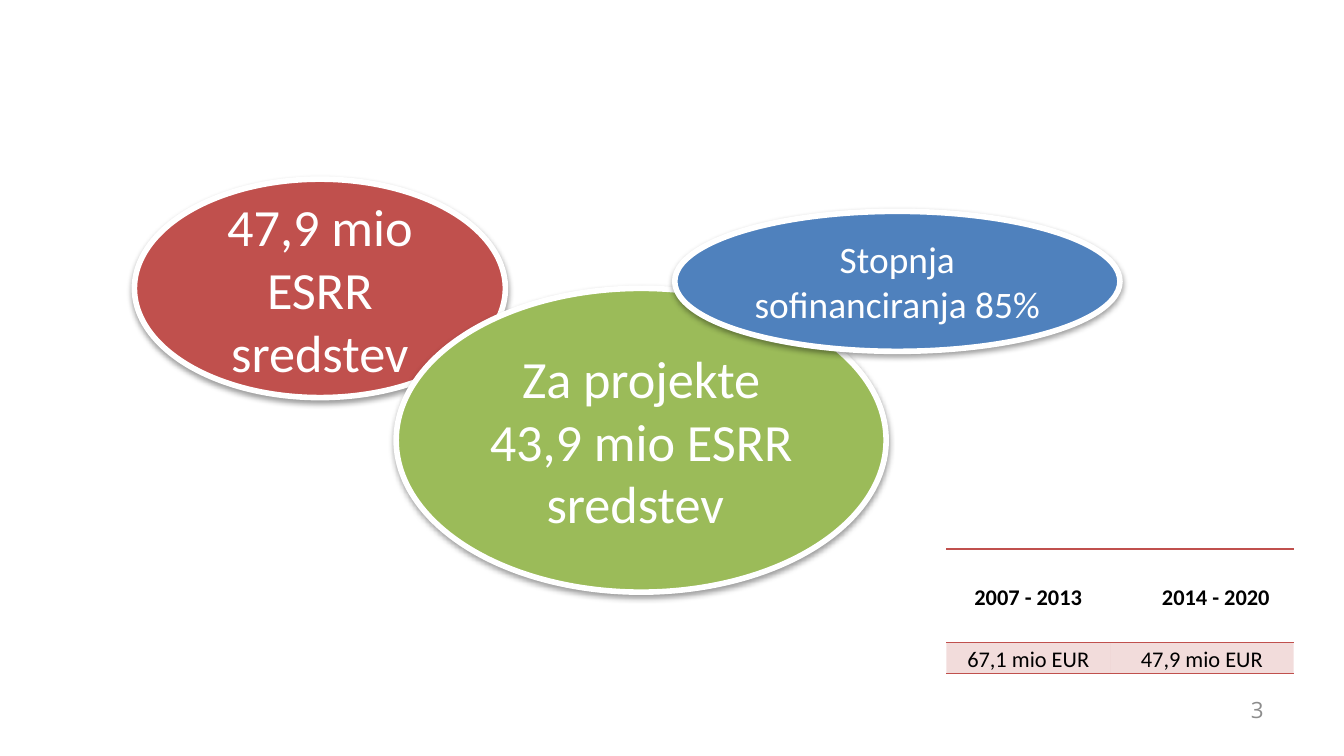
from dataclasses import dataclass

from lxml import etree
from pptx import Presentation
from pptx import util as u
from pptx.dml import color
from pptx.enum import shapes, text
from pptx.oxml import ns

PX = 9525
COLORS = {
    "red": "C0504D",
    "green": "9BBB59",
    "blue": "4F81BD",
    "white": "FFFFFF",
    "black": "000000",
    "gray": "8C8C8C",
}


@dataclass
class Bubble:
    lines: list[str]
    left: int
    top: int
    width: int
    height: int
    fill: str
    size: int = 28


@dataclass
class Cell:
    words: str
    bold: bool = False
    align: text.PP_ALIGN = text.PP_ALIGN.CENTER
    indent: int = 5


BUBBLES = [
    Bubble(["47,9 mio ESRR sredstev"], 96, 128, 265, 156, "red"),
    Bubble(["Za projekte", "43,9 mio ESRR sredstev "], 283, 206, 350, 217, "green"),
    Bubble(["Stopnja sofinanciranja 85%"], 482, 151, 318, 100, "blue", 20),
]
PERIODS = [
    Cell("2007 - 2013", True),
    Cell("2014 - 2020", True, text.PP_ALIGN.LEFT, 37),
]
AMOUNTS = [Cell("67,1 mio EUR"), Cell("47,9 mio EUR")]
COLUMN_WIDTHS = [117, 131]
ROW_HEIGHTS = [67, 22]


def px(*lengths: int) -> list[u.Emu]:
    return [u.Emu(length * PX) for length in lengths]


def rgb(name: str) -> color.RGBColor:
    return color.RGBColor.from_string(COLORS[name])


def child(parent, tag: str, **attributes):
    return etree.SubElement(parent, ns.qn(tag), attributes)


def write(frame, lines: list[str], *, size: int, ink: str, font: str = "Calibri",
          bold: bool = False, align=text.PP_ALIGN.CENTER, spacing: float = 1.0) -> None:
    frame.word_wrap = True
    frame.vertical_anchor = text.MSO_ANCHOR.MIDDLE
    frame.text = "\n".join(lines)
    for paragraph in frame.paragraphs:
        paragraph.alignment = align
        paragraph.line_spacing = spacing
        for run in paragraph.runs:
            run.font.size = u.Pt(size)
            run.font.name = font
            run.font.bold = bold
            run.font.color.rgb = rgb(ink)


def draw_bubble(slide, bubble: Bubble) -> None:
    ellipse = slide.shapes.add_shape(
        shapes.MSO_SHAPE.OVAL,
        *px(bubble.left, bubble.top, bubble.width, bubble.height))
    ellipse.fill.solid()
    ellipse.fill.fore_color.rgb = rgb(bubble.fill)
    ellipse.line.color.rgb = rgb("white")
    ellipse.line.width = u.Pt(3)
    ellipse.shadow.inherit = False
    effects = ellipse._element.spPr.find(ns.qn("a:effectLst"))
    shadow = child(effects, "a:outerShdw", blurRad="40000", dist="20000",
                   dir="5400000", rotWithShape="0")
    shade = child(shadow, "a:srgbClr", val=COLORS["black"])
    child(shade, "a:alpha", val="38000")
    write(ellipse.text_frame, bubble.lines, size=bubble.size, ink="white")


def set_borders(cell, ruled: str) -> None:
    properties = cell._tc.get_or_add_tcPr()
    for side in "LRTB":
        border = child(properties, f"a:ln{side}", w=str(u.Pt(1)))
        if side in ruled:
            child(child(border, "a:solidFill"), "a:srgbClr", val=COLORS["red"])
        else:
            child(border, "a:noFill")


def draw_table(slide) -> None:
    table = slide.shapes.add_table(
        2, 2, *px(676, 392, sum(COLUMN_WIDTHS), sum(ROW_HEIGHTS))).table
    table.horz_banding = False
    for column, width in zip(table.columns, px(*COLUMN_WIDTHS)):
        column.width = width
    for row, height in zip(table.rows, px(*ROW_HEIGHTS)):
        row.height = height
    for row_index, contents in enumerate([PERIODS, AMOUNTS]):
        for column_index, content in enumerate(contents):
            cell = table.cell(row_index, column_index)
            cell.margin_left, cell.margin_right = px(content.indent, 5)
            cell.margin_top = cell.margin_bottom = 0
            cell.vertical_anchor = text.MSO_ANCHOR.MIDDLE
            set_borders(cell, "TB")
            if row_index == 0:
                cell.fill.background()
            else:
                cell.fill.solid()
                cell.fill.fore_color.rgb = rgb("red")
                tint = cell._tc.tcPr.find(ns.qn("a:solidFill"))[0]
                child(tint, "a:alpha", val="20000")
            write(cell.text_frame, [content.words], size=12, ink="black",
                  bold=content.bold, align=content.align, spacing=1.15)


def main() -> None:
    deck = Presentation()
    deck.slide_width, deck.slide_height = px(960, 540)
    slide = deck.slides.add_slide(deck.slide_layouts[6])
    page_number = slide.shapes.add_textbox(*px(688, 492, 224, 29))
    write(page_number.text_frame, ["3"], size=12, ink="gray",
          font="Open Sans", align=text.PP_ALIGN.RIGHT)
    draw_table(slide)
    for bubble in BUBBLES:
        draw_bubble(slide, bubble)
    deck.save("out.pptx")


if __name__ == "__main__":
    main()
